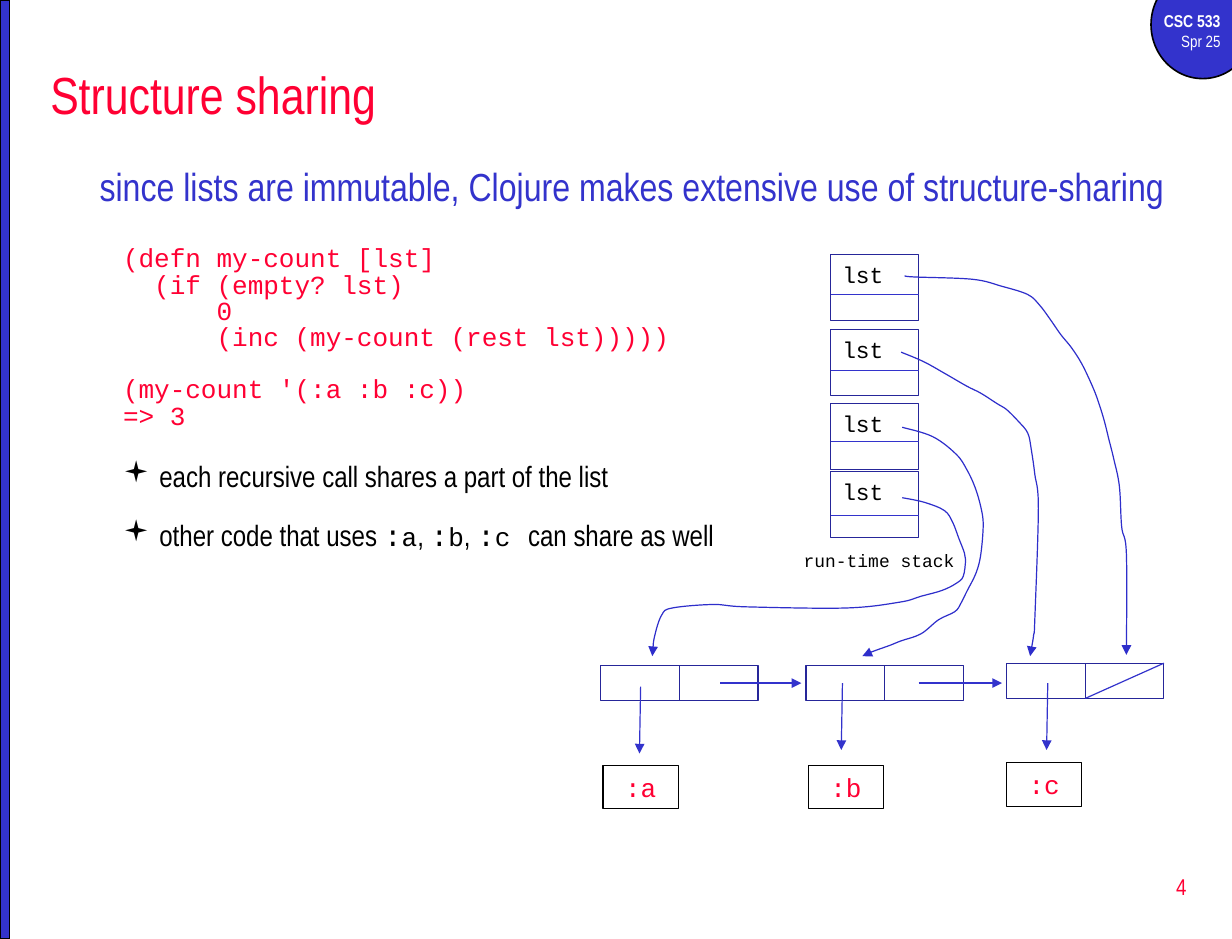
"""Build the slide on structure sharing between recursive calls."""
import lxml.etree
import pptx
import pptx.dml.color
import pptx.enum.shapes
import pptx.enum.text
import pptx.oxml.ns
import pptx.util

Inches, Pt, qn = pptx.util.Inches, pptx.util.Pt, pptx.oxml.ns.qn
SHAPE = pptx.enum.shapes.MSO_SHAPE
ALIGN = pptx.enum.text.PP_ALIGN
ANCHOR = pptx.enum.text.MSO_ANCHOR
COLORS = {"blue": "3333CC", "cell": "262699", "curve": "2E2ECB",
          "red": "FF0033", "black": "000000", "white": "FFFFFF"}
SANS, MONO = "Arial Narrow", "Courier New"

HEADLINE = "since lists are immutable, Clojure makes extensive use of structure-sharing"
CODE = [
    ("(defn my-count [lst]", 24),
    ("  (if (empty? lst)", 0.8),
    ("      0", 0.8),
    ("      (inc (my-count (rest lst)))))", 0.8),
    ("(my-count '(:a :b :c))", 16.5),
    ("=> 3", 0.8),
]
BULLETS = [
    (21, [("each recursive call shares a part of the list", SANS, 18)]),
    (19, [("other code that uses ", SANS, 18), (":", MONO, 18), ("a", MONO, 16),
          (", ", SANS, 18), (":", MONO, 18), ("b", MONO, 16),
          (", ", SANS, 18), (":", MONO, 18), ("c", MONO, 16),
          (" ", MONO, 18), ("can share as well", SANS, 18)]),
]
FRAMES = [(2.17, 2.51), (2.81, 3.16), (3.44, 3.76), (4.02, 4.39)]
FRAME_X, FRAME_W, FRAME_H = 7.08, 0.75, 0.56
CELL_W, CELL_H = 0.67, 0.3
NODES = [
    {"label": ":a", "left": 5.12, "top": 5.67, "box": (5.14, 6.52), "down": (5.46, 5.85)},
    {"label": ":b", "left": 6.87, "top": 5.67, "box": (6.89, 6.52), "down": (7.18, 5.82)},
    {"label": ":c", "left": 8.58, "top": 5.65, "box": (8.58, 6.5), "down": (8.93, 5.82)},
]
NEXT_LINKS = [(6.14, 6.83), (7.83, 8.54)]
LINK_Y = 5.82
CURVES = [
    [(7.69, 4.24), (7.88, 4.28), (8.05, 4.35), (8.12, 4.45), (8.17, 4.58),
     (8.22, 4.71), (8.23, 4.77), (8.21, 4.91), (8.15, 4.97), (8.03, 5.03),
     (7.85, 5.08), (7.67, 5.13), (7.21, 5.18), (6.36, 5.17),
     (6.08, 5.15), (5.73, 5.18), (5.64, 5.24), (5.58, 5.42), (5.56, 5.59)],
    [(7.69, 3.64), (7.95, 3.72), (8.15, 3.87), (8.24, 4), (8.31, 4.15),
     (8.36, 4.32), (8.38, 4.47), (8.36, 4.72), (8.32, 4.88), (8.24, 5.04),
     (8.19, 5.14), (8.14, 5.21), (8, 5.28), (7.85, 5.4), (7.68, 5.46),
     (7.58, 5.5), (7.44, 5.55), (7.35, 5.59)],
    [(7.68, 3), (7.87, 3.08), (8.05, 3.18), (8.24, 3.29), (8.36, 3.35),
     (8.5, 3.44), (8.58, 3.49), (8.68, 3.59), (8.76, 3.69), (8.79, 3.83),
     (8.82, 4.04), (8.85, 4.33), (8.82, 5.28), (8.81, 5.41), (8.78, 5.59)],
    [(7.71, 2.35), (7.79, 2.36), (8.29, 2.38), (8.54, 2.44), (8.76, 2.51),
     (8.86, 2.6), (8.95, 2.72), (9.04, 2.85), (9.13, 2.96), (9.22, 3.1),
     (9.31, 3.29), (9.36, 3.42), (9.41, 3.58), (9.45, 3.74), (9.49, 3.9),
     (9.54, 4.14), (9.56, 4.49), (9.6, 4.72), (9.6, 5.58)],
]


def rgb(name):
    return pptx.dml.color.RGBColor.from_string(COLORS[name])


def add_run(p, text, font, size, color, bold=False):
    r = p.add_run()
    r.text = text
    r.font.name, r.font.size, r.font.bold = font, Pt(size), bold
    r.font.color.rgb = rgb(color)


def prepare(sp, anchor=ANCHOR.TOP):
    tf = sp.text_frame
    tf.word_wrap, tf.vertical_anchor = True, anchor
    return tf


def add_text(slide, box, anchor=ANCHOR.TOP):
    return prepare(slide.shapes.add_textbox(*map(Inches, box)), anchor)


def add_box(slide, box, line, fill=None, width=0.75, kind=SHAPE.RECTANGLE):
    sp = slide.shapes.add_shape(kind, *map(Inches, box))
    sp.shadow.inherit = False
    if fill:
        sp.fill.solid()
        sp.fill.fore_color.rgb = rgb(fill)
    else:
        sp.fill.background()
    sp.line.color.rgb, sp.line.width = rgb(line), Pt(width)
    return sp


def add_arrowhead(sp):
    ln = sp.line._get_or_add_ln()
    lxml.etree.SubElement(ln, qn("a:tailEnd"), type="triangle")


def add_line(slide, start, end, arrow=False):
    sp = slide.shapes.add_connector(
        pptx.enum.shapes.MSO_CONNECTOR.STRAIGHT, *map(Inches, start + end))
    sp.line.color.rgb, sp.line.width = rgb("blue"), Pt(0.75)
    if arrow:
        add_arrowhead(sp)
    lxml.etree.SubElement(sp._element.spPr, qn("a:effectLst"))


def round_corners(sp):
    points = [(int(pt.get("x")), int(pt.get("y"))) for pt in sp._element.iter(qn("a:pt"))]
    padded = [points[0], *points, points[-1]]
    segments = list(sp._element.iter(qn("a:lnTo")))
    for seg, a, b, c, d in zip(segments, padded, padded[1:], padded[2:], padded[3:]):
        seg.clear()
        bezier = lxml.etree.Element(qn("a:cubicBezTo"))
        controls = ([q + (s - p) / 6 for p, q, s in zip(a, b, c)],
                    [s - (u - q) / 6 for q, s, u in zip(b, c, d)], c)
        for x, y in controls:
            lxml.etree.SubElement(bezier, qn("a:pt"), x=str(round(x)), y=str(round(y)))
        seg.getparent().replace(seg, bezier)


def add_curve(slide, points):
    path_points = [(Inches(x), Inches(y)) for x, y in points]
    builder = slide.shapes.build_freeform(*path_points[0])
    builder.add_line_segments(path_points[1:], close=False)
    sp = builder.convert_to_shape()
    round_corners(sp)
    sp.shadow.inherit = False
    sp.fill.background()
    sp.line.color.rgb, sp.line.width = rgb("curve"), Pt(0.75)
    add_arrowhead(sp)


def add_body_paragraph(tf, before, bullet=False):
    p = tf.add_paragraph()
    p.line_spacing, p.space_before = 0.8, Pt(before)
    pPr = p._p.get_or_add_pPr()
    pPr.set("marL", str(Inches(0.51)))
    pPr.set("indent", str(Inches(-0.31)))
    if bullet:
        lxml.etree.SubElement(pPr, qn("a:buFont"), typeface="Wingdings")
        lxml.etree.SubElement(pPr, qn("a:buChar"), char="▪")
    return p


def add_chrome(slide):
    add_box(slide, (9.81, -0.25, 0.88, 0.92), "black", "blue", 1, SHAPE.OVAL)
    tf = add_text(slide, (9.67, 0.04, 0.83, 0.46))
    add_run(tf.paragraphs[0], "CSC 533", SANS, 10.5, "white", True)
    add_run(tf.add_paragraph(), "Spr 25", SANS, 10, "white")
    for p in tf.paragraphs:
        p.alignment = ALIGN.RIGHT
    add_box(slide, (0, 0, 0.08, 8), "black", "blue", 1)
    p = add_text(slide, (8.02, 7.29, 2.19, 0.53), ANCHOR.MIDDLE).paragraphs[0]
    p.alignment = ALIGN.RIGHT
    add_run(p, "4", SANS, 14, "red")


def add_body(slide):
    tf = add_text(slide, (0.33, 0.42, 9.92, 0.75), ANCHOR.MIDDLE)
    add_run(tf.paragraphs[0], "Structure sharing", SANS, 32, "red")
    tf = add_text(slide, (0.75, 1.33, 9.52, 3.71))
    add_run(tf.paragraphs[0], HEADLINE, SANS, 24, "blue")
    for text, before in CODE:
        add_run(add_body_paragraph(tf, before), text, MONO, 16, "red")
    for before, runs in BULLETS:
        p = add_body_paragraph(tf, before, True)
        for text, font, size in runs:
            add_run(p, text, font, size, "black")


def add_diagram(slide):
    for top, divider in FRAMES:
        sp = add_box(slide, (FRAME_X, top, FRAME_W, FRAME_H), "cell")
        p = prepare(sp).paragraphs[0]
        p.alignment = ALIGN.LEFT
        add_run(p, "lst", MONO, 14, "black")
        add_line(slide, (FRAME_X, divider), (FRAME_X + FRAME_W, divider))
    tf = add_text(slide, (6.75, 4.63, 1.58, 0.29))
    add_run(tf.paragraphs[0], "run-time stack", MONO, 11, "black")

    for node in NODES:
        for i in range(2):
            add_box(slide, (node["left"] + i * CELL_W, node["top"], CELL_W, CELL_H), "cell")
        x, y = node["down"]
        add_line(slide, (x, y), (x - 0.01, y + 0.57), True)
        p = prepare(add_box(slide, (*node["box"], 0.64, 0.37), "black")).paragraphs[0]
        p.alignment = ALIGN.CENTER
        add_run(p, node["label"], MONO, 16, "red")
    for start, end in NEXT_LINKS:
        add_line(slide, (start, LINK_Y), (end, LINK_Y), True)
    left, top = NODES[-1]["left"] + CELL_W, NODES[-1]["top"]
    add_line(slide, (left + CELL_W, top), (left, top + CELL_H))
    for points in CURVES:
        add_curve(slide, points)


prs = pptx.Presentation()
prs.slide_width, prs.slide_height = Inches(10.5), Inches(8)
slide = prs.slides.add_slide(prs.slide_layouts[6])
add_chrome(slide)
add_body(slide)
add_diagram(slide)
prs.save("out.pptx")
